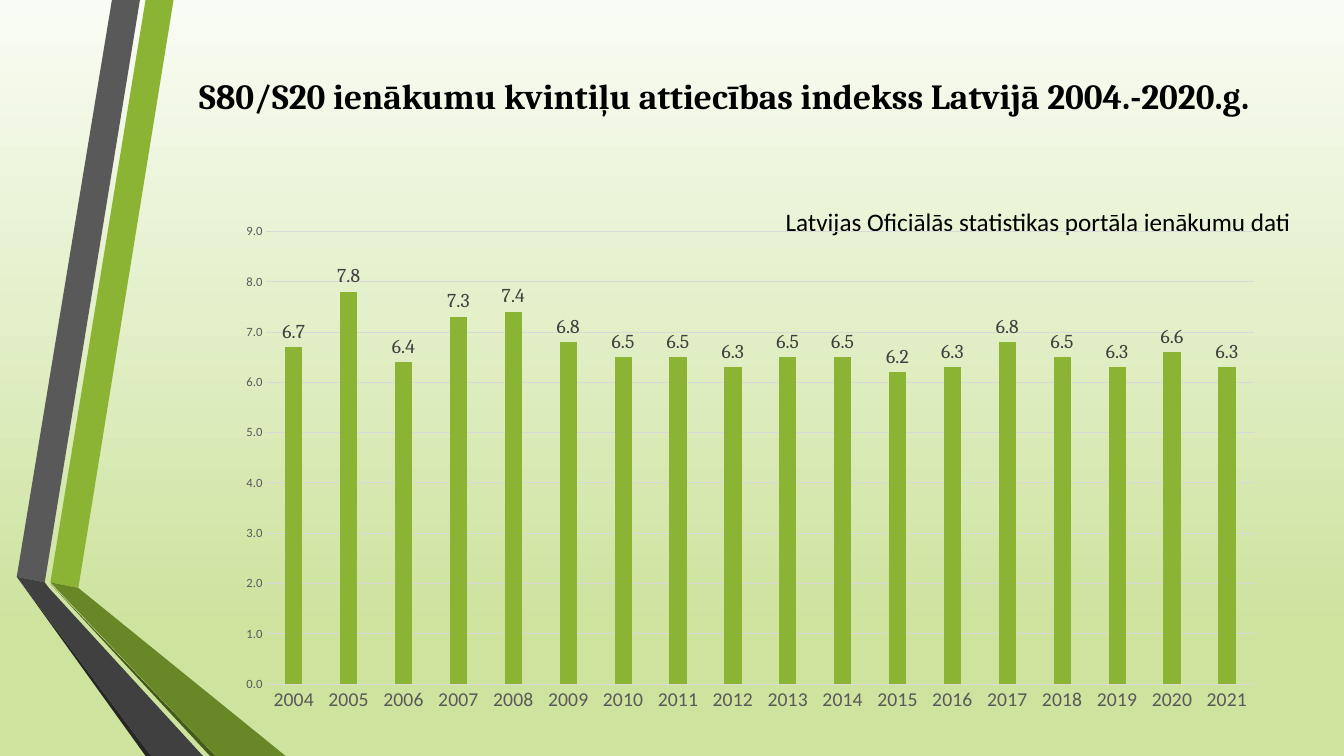
from dataclasses import dataclass

from pptx import Presentation
from pptx.chart import data as chart_data
from pptx.dml import color
from pptx.enum import chart as chart_kinds, text
from pptx.util import Pt

WIDTH, HEIGHT = 960, 540
GREEN, BLACK, AXIS_GREY, GRID_GREY = "8BB434", "000000", "595959", "D9D9D9"


@dataclass(frozen=True)
class Ribbon:
    """One flat face of the folded ribbons; corners are in points."""
    fill: str
    corners: tuple[tuple[float, float], ...]


@dataclass(frozen=True)
class Caption:
    words: str
    left: float
    top: float
    width: float
    height: float
    font: str
    size: float
    bold: bool
    align: text.PP_ALIGN


RIBBONS = (
    Ribbon(GREEN, ((36, 416.5), (55.5, 419.8), (124.5, 0), (104.5, 0))),
    Ribbon("595959", ((100, 0), (80, 0), (11.8, 412.5), (31.7, 415.7))),
    Ribbon("262626", ((11.8, 412.5), (104.5, HEIGHT), (108.5, HEIGHT))),
    Ribbon("465A1A", ((36, 416.8), (149.8, HEIGHT), (154, HEIGHT))),
    Ribbon("688727", ((36, 416.5), (154, HEIGHT), (203.8, HEIGHT), (55.5, 419.8))),
    Ribbon("404040", ((145.3, HEIGHT), (34.6, 419.8), (31.7, 415.7),
                      (11.8, 412.5), (108.5, HEIGHT))),
)
HEADING = Caption("S80/S20 ienākumu kvintiļu attiecības indekss Latvijā 2004.-2020.g.",
                  123, 37, 789, 62, "Cambria", 25.2, True, text.PP_ALIGN.CENTER)
SOURCE_NOTE = Caption("Latvijas Oficiālās statistikas portāla ienākumu dati",
                      554, 144, 389, 29, "Calibri", 18, False, text.PP_ALIGN.LEFT)
YEARS = [str(year) for year in range(2004, 2022)]
RATIOS = (6.7, 7.8, 6.4, 7.3, 7.4, 6.8, 6.5, 6.5, 6.3,
          6.5, 6.5, 6.2, 6.3, 6.8, 6.5, 6.3, 6.6, 6.3)


def rgb(code: str) -> color.RGBColor:
    return color.RGBColor.from_string(code)


def style_font(font, name: str, size: float, code: str, bold: bool = False) -> None:
    font.name, font.size, font.bold = name, Pt(size), bold
    font.color.rgb = rgb(code)


def style_line(line, code: str) -> None:
    line.color.rgb = rgb(code)
    line.width = Pt(0.75)


def paint_background(page) -> None:
    fill = page.background.fill
    fill.gradient()
    fill.gradient_angle = 270
    for stop, position, code in zip(fill.gradient_stops, (0, 0.83), ("F9FCF4", "CDE39E")):
        stop.position = position
        stop.color.rgb = rgb(code)


def draw_ribbon(page, ribbon: Ribbon) -> None:
    start, *rest = ribbon.corners
    builder = page.shapes.build_freeform(*start, scale=Pt(1))
    builder.add_line_segments(rest, close=True)
    face = builder.convert_to_shape()
    face.shadow.inherit = False
    face.fill.solid()
    face.fill.fore_color.rgb = rgb(ribbon.fill)
    face.line.fill.background()


def fill_caption(box, caption: Caption) -> None:
    box.left, box.top = Pt(caption.left), Pt(caption.top)
    box.width, box.height = Pt(caption.width), Pt(caption.height)
    frame = box.text_frame
    frame.text = caption.words
    frame.word_wrap = True
    frame.vertical_anchor = text.MSO_ANCHOR.MIDDLE
    para = frame.paragraphs[0]
    para.alignment = caption.align
    style_font(para.runs[0].font, caption.font, caption.size, BLACK, caption.bold)


def draw_chart(page) -> None:
    table = chart_data.CategoryChartData(number_format="0.0")
    table.categories = YEARS
    table.add_series("Series 1", RATIOS)
    chart = page.shapes.add_chart(chart_kinds.XL_CHART_TYPE.COLUMN_CLUSTERED,
                                  Pt(161), Pt(153), Pt(750), Pt(363), table).chart
    chart.has_title = chart.has_legend = False
    style_font(chart.font, "Calibri", 10, BLACK)

    # Columns and their labels
    plot = chart.plots[0]
    plot.vary_by_categories = False
    plot.gap_width, plot.overlap = 219, -27
    columns = plot.series[0].format.fill
    columns.solid()
    columns.fore_color.rgb = rgb(GREEN)
    plot.has_data_labels = True
    labels = plot.data_labels
    labels.show_value = True
    labels.position = chart_kinds.XL_LABEL_POSITION.OUTSIDE_END
    labels.number_format, labels.number_format_is_linked = "0.0", False
    style_font(labels.font, "Cambria", 14, "404040")

    # Axes
    years, ratios = chart.category_axis, chart.value_axis
    for axis, size in ((years, 14), (ratios, 9)):
        axis.major_tick_mark = axis.minor_tick_mark = chart_kinds.XL_TICK_MARK.NONE
        style_font(axis.tick_labels.font, "Calibri", size, AXIS_GREY)
    style_line(years.format.line, GRID_GREY)
    ratios.format.line.fill.background()
    ratios.minimum_scale, ratios.maximum_scale, ratios.major_unit = 0, 9, 1
    ratios.tick_labels.number_format = "0.0"
    ratios.tick_labels.number_format_is_linked = False
    style_line(ratios.major_gridlines.format.line, GRID_GREY)


def main() -> None:
    deck = Presentation()
    deck.slide_width, deck.slide_height = Pt(WIDTH), Pt(HEIGHT)
    page = deck.slides.add_slide(deck.slide_layouts.get_by_name("Title Only"))

    # Backdrop
    paint_background(page)
    for ribbon in RIBBONS:
        draw_ribbon(page, ribbon)

    # Heading, source note and chart
    fill_caption(page.shapes.title, HEADING)
    fill_caption(page.shapes.add_textbox(0, 0, 0, 0), SOURCE_NOTE)
    draw_chart(page)

    deck.save("out.pptx")


if __name__ == "__main__":
    main()
